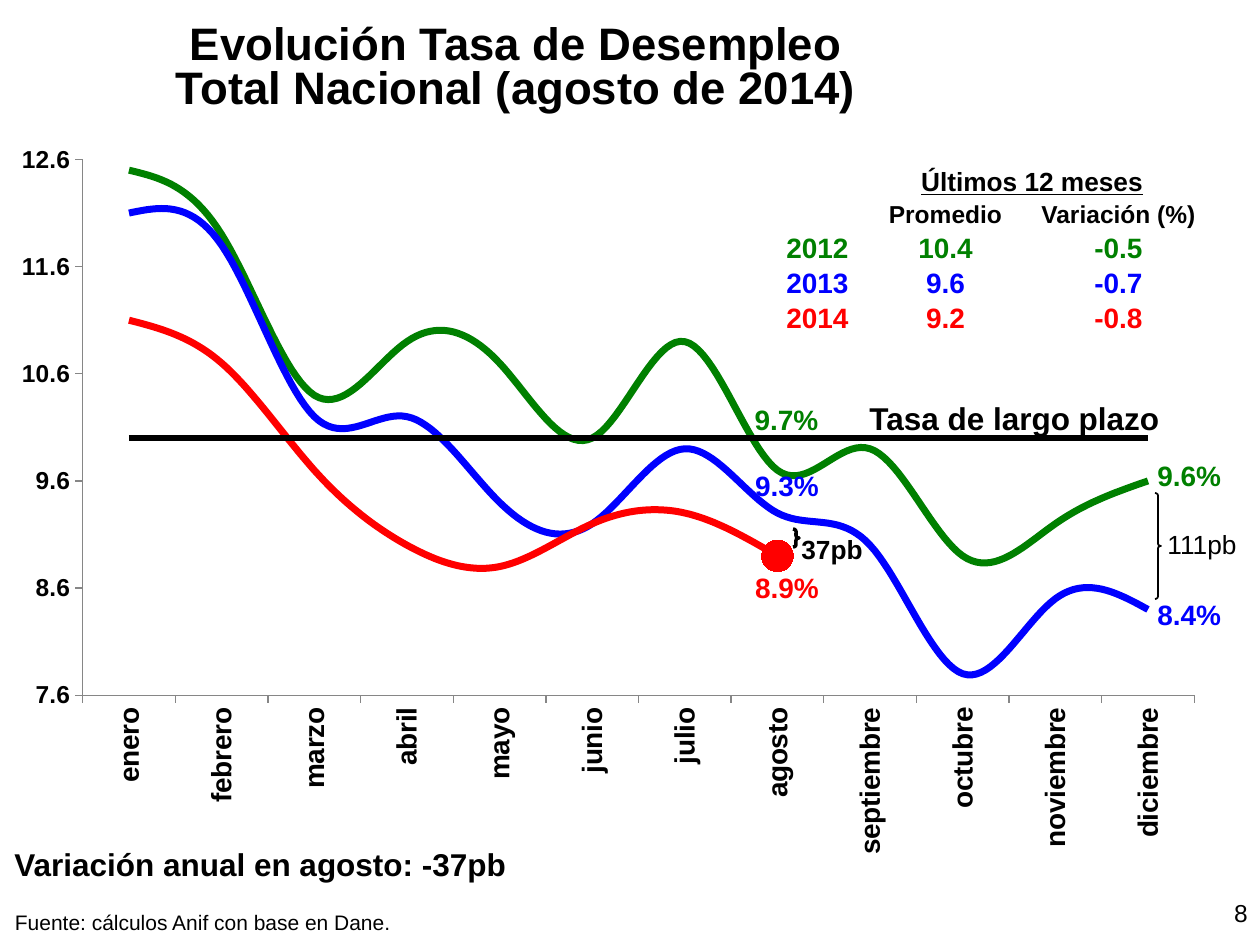
from dataclasses import dataclass

from lxml import etree
from pptx import Presentation
from pptx.chart.data import CategoryChartData
from pptx.dml.color import RGBColor
from pptx.enum.chart import XL_CHART_TYPE, XL_MARKER_STYLE, XL_TICK_MARK
from pptx.enum.shapes import MSO_SHAPE
from pptx.enum.text import MSO_ANCHOR, MSO_AUTO_SIZE, PP_ALIGN
from pptx.oxml.ns import qn
from pptx.util import Pt

LINE = XL_CHART_TYPE.LINE
CIRCLE, NO_MARKER = XL_MARKER_STYLE.CIRCLE, XL_MARKER_STYLE.NONE
TICK_OUT, TICK_NONE = XL_TICK_MARK.OUTSIDE, XL_TICK_MARK.NONE
RIGHT_BRACE = MSO_SHAPE.RIGHT_BRACE
TOP, MIDDLE = MSO_ANCHOR.TOP, MSO_ANCHOR.MIDDLE
FIT_SHAPE, NO_FIT = MSO_AUTO_SIZE.SHAPE_TO_FIT_TEXT, MSO_AUTO_SIZE.NONE
LEFT, CENTER, RIGHT = PP_ALIGN.LEFT, PP_ALIGN.CENTER, PP_ALIGN.RIGHT
EMU_PER_PX = 914400 / 126


@dataclass(frozen=True)
class Theme:
    font: str = "Arial"
    black: str = "000000"
    white: str = "FFFFFF"
    axis: str = "868686"
    y2012: str = "008000"
    y2013: str = "0000FF"
    y2014: str = "FF0000"
    title: int = 26
    heading: int = 18
    label: int = 16
    gap: int = 15
    small: int = 14
    source: int = 12


T = Theme()

MONTHS = ["enero", "febrero", "marzo", "abril", "mayo", "junio", "julio",
          "agosto", "septiembre", "octubre", "noviembre", "diciembre"]
AUGUST = MONTHS.index("agosto")
# name, colour, line width, smooth, values
SERIES = [
    ("2012", T.y2012, 4, True,
     [12.5, 11.9, 10.4, 10.9, 10.7, 10, 10.9, 9.7, 9.9, 8.9, 9.2, 9.6]),
    ("2013", T.y2013, 4, True,
     [12.1, 11.8, 10.2, 10.2, 9.4, 9.2, 9.9, 9.3, 9, 7.8, 8.5, 8.4]),
    ("2014", T.y2014, 4, True,
     [11.1, 10.7, 9.7, 9, 8.8, 9.2, 9.3, 8.9] + [None] * 4),
    ("Tasa de largo plazo", T.black, 3.5, False, [10] * 12),
]
# cells, size, colour
SUMMARY_ROWS = [
    (["", "Últimos 12 meses", ""], T.gap, T.black),
    (["", "Promedio", "Variación (%)"], T.small, T.black),
    (["2012", "10.4", "-0.5"], T.label, T.y2012),
    (["2013", "9.6", "-0.7"], T.label, T.y2013),
    (["2014", "9.2", "-0.8"], T.label, T.y2014),
]
# text, box in px, size, colour, bold, alignment
LABELS = [
    ("8", (1176, 892, 84, 53), T.small, T.black, False, RIGHT),
    ("9.6%", (1145, 452, 95, 47), T.label, T.y2012, True, LEFT),
    ("8.4%", (1145, 591, 95, 47), T.label, T.y2013, True, LEFT),
    ("9.7%", (738, 396, 97, 47), T.label, T.y2012, True, CENTER),
    ("9.3%", (729, 462, 116, 47), T.label, T.y2013, True, CENTER),
    ("8.9%", (729, 564, 116, 47), T.label, T.y2014, True, CENTER),
    ("37pb", (789, 527, 107, 44), T.gap, T.black, True, LEFT),
    ("111pb", (1155, 522, 107, 44), T.gap, T.black, False, LEFT),
    ("Tasa de largo plazo", (774, 393, 481, 50),
     T.heading, T.black, True, CENTER),
]


def px(n):
    return round(n * EMU_PER_PX)


def rgb(value):
    return RGBColor.from_string(value)


def style_font(font, size, color=T.black, bold=True):
    font.name, font.size, font.bold = T.font, Pt(size), bold
    font.color.rgb = rgb(color)


def style_text(tf, size, color, bold, align):
    for p in tf.paragraphs:
        p.alignment = align
        for r in p.runs:
            style_font(r.font, size, color, bold)


def set_margins(target, left, top, right, bottom):
    target.margin_left, target.margin_top = px(left), px(top)
    target.margin_right, target.margin_bottom = px(right), px(bottom)


def add_title(slide, text, box):
    sp = slide.shapes.title
    sp.left, sp.top, sp.width, sp.height = map(px, box)
    tf = sp.text_frame
    tf.text = text
    tf.auto_size, tf.vertical_anchor = NO_FIT, TOP
    set_margins(tf, 0, 0, 0, 0)
    style_text(tf, T.title, T.black, True, CENTER)
    for p in tf.paragraphs:
        p.line_spacing = 0.8
        p.space_before = Pt(0)


def add_label(slide, text, box, size, color, bold, align, wrap=True):
    tf = slide.shapes.add_textbox(*map(px, box)).text_frame
    tf.text = text
    tf.word_wrap, tf.auto_size = wrap, FIT_SHAPE
    style_text(tf, size, color, bold, align)
    return tf


def add_brace(slide, box, width):
    sp = slide.shapes.add_shape(RIGHT_BRACE, *map(px, box))
    sp.shadow.inherit = False
    sp.adjustments[0] = 0.41
    sp.fill.background()
    sp.line.color.rgb = rgb(T.black)
    sp.line.width = Pt(width)


def set_plot_area(chart, x, y, w, h):
    """Fix the inner plot area as fractions of the chart."""
    plot_area = chart._chartSpace.chart.plotArea
    for old in plot_area.findall(qn("c:layout")):
        plot_area.remove(old)
    layout = etree.Element(qn("c:layout"))
    manual = etree.SubElement(layout, qn("c:manualLayout"))
    for tag, val in [("layoutTarget", "inner"), ("xMode", "edge"),
                     ("yMode", "edge"), ("x", x), ("y", y),
                     ("w", w), ("h", h)]:
        etree.SubElement(manual, qn("c:" + tag), val=str(val))
    plot_area.insert(0, layout)


def style_axis(axis, size):
    axis.has_major_gridlines = False
    axis.major_tick_mark, axis.minor_tick_mark = TICK_OUT, TICK_NONE
    axis.format.line.color.rgb = rgb(T.axis)
    style_font(axis.tick_labels.font, size)


def add_unemployment_chart(slide, box):
    data = CategoryChartData(number_format="0.0")
    data.categories = MONTHS
    for name, *_, values in SERIES:
        data.add_series(name, values)
    chart = slide.shapes.add_chart(LINE, *map(px, box), data).chart
    chart.has_legend = chart.has_title = False
    style_font(chart.font, 10, bold=False)
    set_plot_area(chart, 0.066, 0.031, 0.909, 0.737)

    months, rate = chart.category_axis, chart.value_axis
    style_axis(months, T.label)
    months._element.find(qn("c:txPr")).find(qn("a:bodyPr")).set("rot", "-5400000")
    style_axis(rate, T.small)
    rate.minimum_scale, rate.maximum_scale, rate.major_unit = 7.6, 12.6, 1
    rate.tick_labels.number_format = "#,##0.0"
    rate.tick_labels.number_format_is_linked = False

    chart.plots[0].vary_by_categories = False
    for s, (name, color, width, smooth, _) in zip(chart.plots[0].series, SERIES):
        s.smooth, s.marker.style = smooth, NO_MARKER
        s.format.line.color.rgb, s.format.line.width = rgb(color), Pt(width)
        if name == "2014":
            point = s.points[AUGUST]
            point.marker.style, point.marker.size = CIRCLE, 18
            for part in (point.marker.format.line, point.format.line):
                part.color.rgb = rgb(color)
            point.format.line.width = Pt(width)
            point.marker.format.fill.solid()
            point.marker.format.fill.fore_color.rgb = rgb(color)


def add_summary_table(slide, box, widths, heights):
    table = slide.shapes.add_table(
        len(heights), len(widths), *map(px, box)).table
    table.first_row = table.horz_banding = False
    for col, w in zip(table.columns, widths):
        col.width = px(w)
    for row, h, (texts, size, color) in zip(table.rows, heights, SUMMARY_ROWS):
        row.height = px(h)
        for cell, text in zip(row.cells, texts):
            cell.fill.solid()
            cell.fill.fore_color.rgb = rgb(T.white)
            cell.vertical_anchor = MIDDLE
            set_margins(cell, 1, 1, 1, 0)
            if text:
                cell.text = text
                style_text(cell.text_frame, size, color, True, CENTER)
            else:
                etree.SubElement(cell.text_frame.paragraphs[0]._p,
                                 qn("a:endParaRPr"), sz=str(size * 100))
    header = table.cell(0, 1)
    header.merge(table.cell(0, 2))
    header.text_frame.paragraphs[0].runs[0].font.underline = True


def main():
    prs = Presentation()
    prs.slide_width, prs.slide_height = px(1260), px(945)
    slide = prs.slides.add_slide(prs.slide_layouts[5])
    add_title(slide, "Evolución Tasa de Desempleo\nTotal Nacional (agosto de 2014)",
              (68, 26, 896, 87))
    add_unemployment_chart(slide, (2, 137, 1223, 727))
    add_summary_table(slide, (776, 165, 429, 171),
                      [83, 173, 173], [34, 32, 35, 35, 35])
    for label in LABELS:
        add_label(slide, *label)
    add_label(slide, "Variación anual en agosto: -37pb", (2, 839, 522, 50),
              T.heading, T.black, True, LEFT, wrap=False)
    source = add_label(slide, "Fuente: cálculos Anif con base en Dane.",
                       (15, 910, 378, 25), T.source, T.black, False, LEFT,
                       wrap=False)
    set_margins(source, 0, 0, 0, 0)
    add_brace(slide, (793, 529, 6, 18), 2)
    add_brace(slide, (1155, 493, 6, 106), 1)
    prs.save("out.pptx")


if __name__ == "__main__":
    main()
